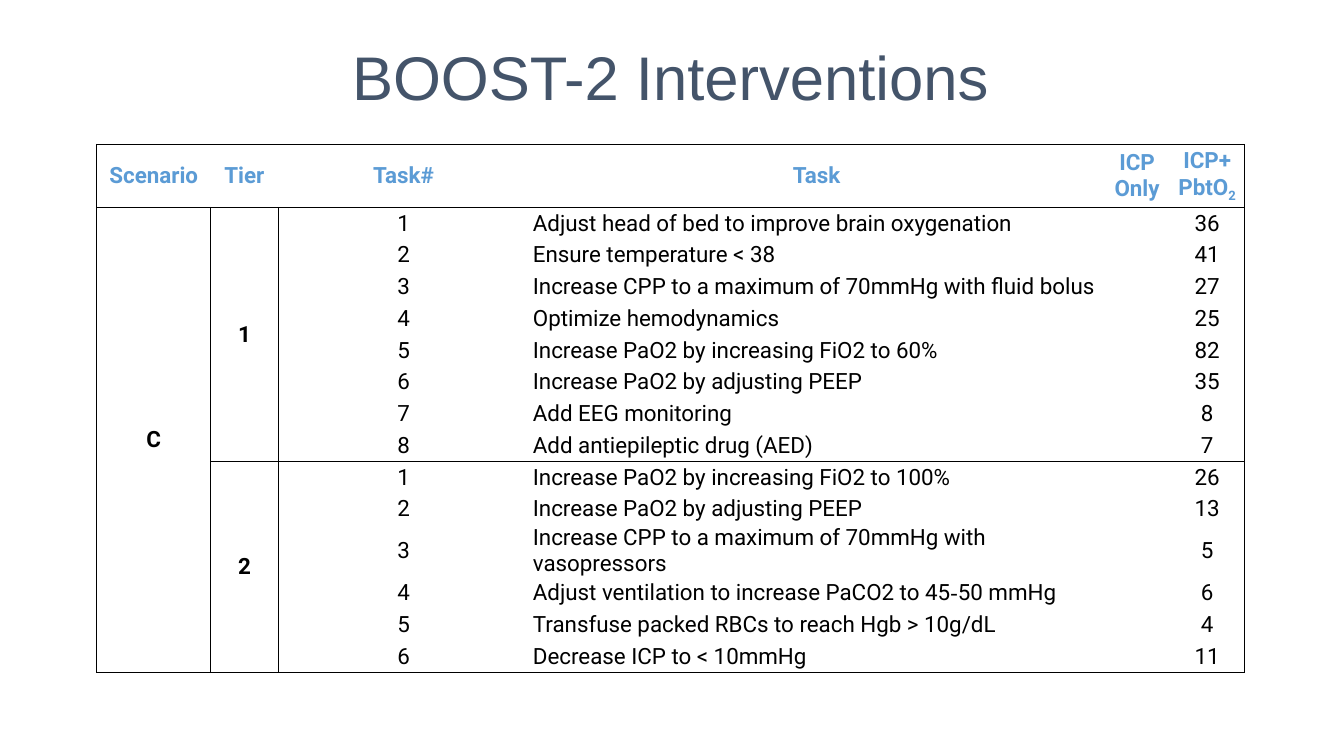
from dataclasses import dataclass
from typing import Optional

from lxml.etree import SubElement
from pptx import Presentation
from pptx.dml.color import RGBColor
from pptx.enum.text import MSO_ANCHOR as Anchor, MSO_AUTO_SIZE as AutoSize, PP_ALIGN as Align
from pptx.oxml.ns import qn
from pptx.util import Cm, Pt


@dataclass(frozen=True)
class Theme:
    title_color: RGBColor = RGBColor(0x44, 0x54, 0x6A)
    header_color: RGBColor = RGBColor(0x5B, 0x9B, 0xD5)
    ink: RGBColor = RGBColor(0, 0, 0)
    title_font: str = "Arial"
    table_font: str = "Roboto"
    hyphen_font: str = "Times New Roman"
    title_size: Pt = Pt(44)
    table_size: Pt = Pt(16)
    rule_width: Pt = Pt(1)


@dataclass(frozen=True)
class Span:
    text: str
    font: Optional[str] = None
    baseline: Optional[int] = None


THEME = Theme()
HEADERS = ["Scenario", "Tier", "Task#", "Task", "ICP\vOnly",
           (Span("ICP+ PbtO"), Span("2", baseline=-25000))]
TIERS = {
    "1": [
        ("Adjust head of bed to improve brain oxygenation", 36),
        ("Ensure temperature < 38", 41),
        ("Increase CPP to a maximum of 70mmHg with fluid bolus", 27),
        ("Optimize hemodynamics", 25),
        ("Increase PaO2 by increasing FiO2 to 60%", 82),
        ("Increase PaO2 by adjusting PEEP", 35),
        ("Add EEG monitoring", 8),
        ("Add antiepileptic drug (AED)", 7),
    ],
    "2": [
        ("Increase PaO2 by increasing FiO2 to 100%", 26),
        ("Increase PaO2 by adjusting PEEP", 13),
        ("Increase CPP to a maximum of 70mmHg with vasopressors", 5),
        ((Span("Adjust ventilation to increase PaCO2 to 45"),
          Span("‐", font=THEME.hyphen_font), Span("50 mmHg")), 6),
        ("Transfuse packed RBCs to reach Hgb > 10g/dL", 4),
        ("Decrease ICP to < 10mmHg", 11),
    ],
}
COLUMN_WIDTHS = [2.87, 1.7, 6.32, 14.5, 1.65, 1.88]
HEADER_HEIGHT, ROW_HEIGHT = 1.59, 0.8
TASK_COLUMN = 3


class SlideBuilder:
    def __init__(self, deck, theme):
        self.theme = theme
        self.page = deck.slides.add_slide(deck.slide_layouts.get_by_name("Title Only"))

    def title(self, text, left, top, width, height):
        box = self.page.shapes.title
        box.left, box.top, box.width, box.height = map(Cm, (left, top, width, height))
        frame = box.text_frame
        frame.text = text
        frame.auto_size = AutoSize.NONE
        frame.vertical_anchor = Anchor.TOP
        frame.margin_top = Cm(0.3)
        para = frame.paragraphs[0]
        para.alignment = Align.CENTER
        para.font.name = self.theme.title_font
        para.font.size = self.theme.title_size
        para.font.color.rgb = self.theme.title_color

    def table(self, left, top, widths, heights):
        frame = self.page.shapes.add_table(
            len(heights), len(widths), Cm(left), Cm(top), Cm(sum(widths)), Cm(sum(heights)))
        table = frame.table
        table.first_row = table.horz_banding = False
        for column, width in zip(table.columns, widths):
            column.width = Cm(width)
        for row, height in zip(table.rows, heights):
            row.height = Cm(height)
        return table

    def cell(self, cell, content, color, bold, alignment):
        cell.fill.background()
        cell.vertical_anchor = Anchor.MIDDLE
        cell.margin_left = cell.margin_right = Cm(0.1)
        cell.margin_top = cell.margin_bottom = 0
        para = cell.text_frame.paragraphs[0]
        if isinstance(content, str):
            para.text = content
        else:
            for span in content:
                self.span(para, span)
        para.alignment = alignment
        para.font.name = self.theme.table_font
        para.font.size = self.theme.table_size
        para.font.bold = bold
        para.font.color.rgb = color

    def span(self, para, span):
        run = para.add_run()
        run.text = span.text
        if span.font:
            run.font.name = span.font
        if span.baseline:
            run.font.size = self.theme.table_size
            run._r.get_or_add_rPr().set("baseline", str(span.baseline))

    def borders(self, cell, left, right, top, bottom):
        """Draw a rule on each side that is true and clear the other sides."""
        properties = cell._tc.get_or_add_tcPr()
        sides = {"a:lnL": left, "a:lnR": right, "a:lnT": top, "a:lnB": bottom}
        for position, (tag, shown) in enumerate(sides.items()):
            line = SubElement(properties, qn(tag), w=str(self.theme.rule_width))
            properties.insert(position, line)
            if shown:
                fill = SubElement(line, qn("a:solidFill"))
                SubElement(fill, qn("a:srgbClr"), val=str(self.theme.ink))
            else:
                SubElement(line, qn("a:noFill"))


def table_rows():
    """Return the text of all rows and the first and last row of each tier."""
    rows, tier_ranges = [HEADERS], []
    for tier, tasks in TIERS.items():
        first = len(rows)
        for number, (task, count) in enumerate(tasks, 1):
            scenario = "C" if len(rows) == 1 else ""
            rows.append([scenario, tier if number == 1 else "", str(number), task, "", str(count)])
        tier_ranges.append((first, len(rows) - 1))
    return rows, tier_ranges


def add_interventions(builder):
    rows, tier_ranges = table_rows()
    last_row, last_column = len(rows) - 1, len(HEADERS) - 1
    table = builder.table(2.44, 3.64, COLUMN_WIDTHS, [HEADER_HEIGHT] + [ROW_HEIGHT] * last_row)
    table.cell(1, 0).merge(table.cell(last_row, 0))
    for first, last in tier_ranges:
        table.cell(first, 1).merge(table.cell(last, 1))

    tier_starts = [first for first, _ in tier_ranges]
    tier_ends = [last for _, last in tier_ranges]
    for row, contents in enumerate(rows):
        for column, content in enumerate(contents):
            cell = table.cell(row, column)
            header = row == 0
            builder.cell(
                cell, content,
                color=builder.theme.header_color if header else builder.theme.ink,
                bold=header or column < 2,
                alignment=Align.LEFT if column == TASK_COLUMN and not header else Align.CENTER)
            bottom_row = row + cell.span_height - 1 if cell.is_merge_origin else row
            builder.borders(
                cell,
                left=column == 0 or (not header and column <= 2),
                right=column == last_column or (not header and column <= 1),
                top=row <= 1 or (column > 0 and row in tier_starts),
                bottom=bottom_row in (0, last_row) or (column > 0 and bottom_row in tier_ends))


def main():
    deck = Presentation()
    deck.slide_width, deck.slide_height = Cm(33.87), Cm(19.05)
    builder = SlideBuilder(deck, THEME)
    builder.title("BOOST-2 Interventions", 5.79, 0.69, 22.23, 3.18)
    add_interventions(builder)
    deck.save("out.pptx")


if __name__ == "__main__":
    main()
